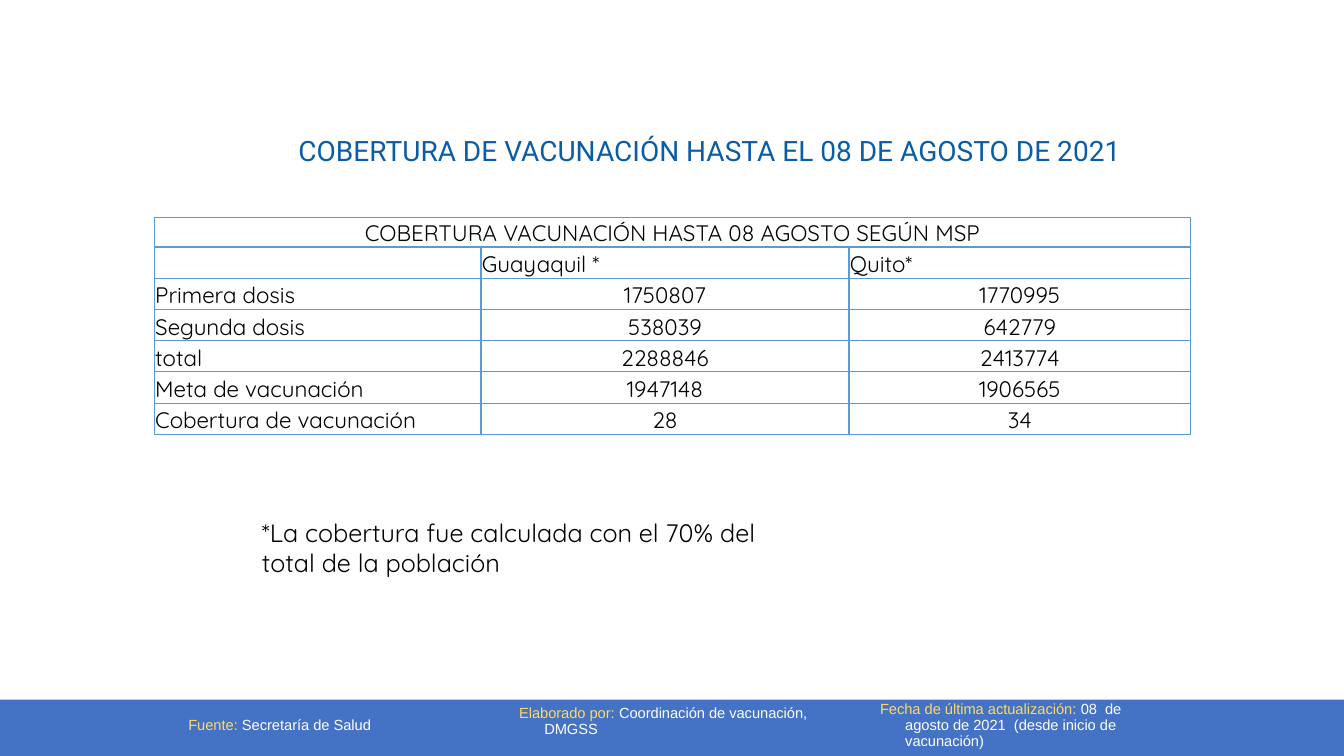
from lxml import etree
from pptx import Presentation
from pptx import util as u
from pptx.dml import color
from pptx.enum import shapes, text
from pptx.oxml import ns

PX = 9144
COLORS = {"band": "4472C4", "title": "095DA6", "label": "FFD966",
          "white": "FFFFFF", "black": "000000", "grid": "5B9BD5"}

FOOTERS = [
    ((177, 700, 324, 40), "Fuente: ", "Secretaría de Salud"),
    ((505, 696, 324, 40), "Elaborado por: ", "Coordinación de vacunación, DMGSS"),
    ((863, 700, 292, 40), "Fecha de última actualización: ",
     "08  de agosto de 2021  (desde inicio de vacunación)"),
]
COVERAGE = [
    ["COBERTURA VACUNACIÓN HASTA 08 AGOSTO SEGÚN MSP", "", ""],
    ["", "Guayaquil *", "Quito*"],
    ["Primera dosis", "1750807", "1770995"],
    ["Segunda dosis", "538039", "642779"],
    ["total", "2288846", "2413774"],
    ["Meta de vacunación", "1947148", "1906565"],
    ["Cobertura de vacunación", "28", "34"],
]


class SlideBuilder:
    """Draws styled elements on one slide, with lengths in px."""

    def __init__(self, presentation):
        self.slide = presentation.slides.add_slide(presentation.slide_layouts[5])

    def box(self, place):
        return [length * PX for length in place]

    def styled_run(self, paragraph, words, font, size, color_name):
        run = paragraph.add_run()
        run.text = words
        run.font.name = font
        run.font.size = u.Pt(size)
        run.font.color.rgb = color.RGBColor.from_string(COLORS[color_name])

    def hang(self, paragraph):
        paragraph.alignment = text.PP_ALIGN.LEFT
        paragraph.line_spacing = 0.9
        paragraph.space_before = u.Pt(10)
        properties = paragraph._p.get_or_add_pPr()
        properties.set("marL", str(25 * PX))
        properties.set("indent", str(-25 * PX))

    def band(self, place):
        shape = self.slide.shapes.add_shape(shapes.MSO_SHAPE.RECTANGLE, *self.box(place))
        shape.shadow.inherit = False
        shape.fill.solid()
        shape.fill.fore_color.rgb = color.RGBColor.from_string(COLORS["band"])
        shape.line.fill.background()

    def title(self, place, words):
        shape = self.slide.shapes.title
        shape.left, shape.top, shape.width, shape.height = self.box(place)
        frame = shape.text_frame
        frame.word_wrap = True
        frame.auto_size = text.MSO_AUTO_SIZE.NONE
        frame.vertical_anchor = text.MSO_ANCHOR.TOP
        self.hang(frame.paragraphs[0])
        self.styled_run(frame.paragraphs[0], words, "Roboto", 20, "title")

    def textbox(self, place):
        frame = self.slide.shapes.add_textbox(*self.box(place)).text_frame
        frame.word_wrap = True
        return frame

    def footer(self, place, label, words):
        frame = self.textbox(place)
        frame.vertical_anchor = text.MSO_ANCHOR.MIDDLE
        paragraph = frame.paragraphs[0]
        self.hang(paragraph)
        self.styled_run(paragraph, label, "Arial", 10.5, "label")
        self.styled_run(paragraph, words, "Arial", 10.5, "white")

    def note(self, place, words):
        frame = self.textbox(place)
        frame.auto_size = text.MSO_AUTO_SIZE.SHAPE_TO_FIT_TEXT
        self.styled_run(frame.paragraphs[0], words, "Quicksand", 18, "black")

    def border(self, cell):
        properties = cell._tc.get_or_add_tcPr()
        for side in ("a:lnL", "a:lnR", "a:lnT", "a:lnB"):
            line = etree.SubElement(properties, ns.qn(side), w=str(u.Pt(1)))
            fill = etree.SubElement(line, ns.qn("a:solidFill"))
            etree.SubElement(fill, ns.qn("a:srgbClr"), val=COLORS["grid"])

    def cell(self, cell, words, centered):
        cell.margin_left = cell.margin_right = cell.margin_top = PX
        cell.margin_bottom = 0
        cell.vertical_anchor = text.MSO_ANCHOR.BOTTOM
        self.border(cell)
        cell.fill.background()
        paragraph = cell.text_frame.paragraphs[0]
        paragraph.alignment = text.PP_ALIGN.CENTER if centered else text.PP_ALIGN.LEFT
        self.styled_run(paragraph, words, "Quicksand", 16, "black")

    def table(self, left, top, widths, heights, rows):
        place = self.box((left, top, sum(widths), sum(heights)))
        table = self.slide.shapes.add_table(len(rows), len(widths), *place).table
        table.first_row = table.horz_banding = False
        for column, width in zip(table.columns, widths):
            column.width = width * PX
        for row, height in zip(table.rows, heights):
            row.height = height * PX
        for i, row in enumerate(rows):
            for j, words in enumerate(row):
                self.cell(table.cell(i, j), words, i == 0 or (i > 1 and j > 0))
        table.cell(0, 0).merge(table.cell(0, len(widths) - 1))


def main():
    presentation = Presentation()
    presentation.slide_width = 1333 * PX
    presentation.slide_height = 750 * PX
    builder = SlideBuilder(presentation)
    builder.band((0, 694, 1333, 56))
    builder.title((286, 131, 869, 86), "COBERTURA DE VACUNACIÓN HASTA EL 08 DE AGOSTO DE 2021")
    for place, label, words in FOOTERS:
        builder.footer(place, label, words)
    builder.note((250, 508, 558, 71),
                 "*La cobertura fue calculada con el 70% del total de la población")
    builder.table(153, 216, [324, 365, 339], [29] + [31] * 6, COVERAGE)
    presentation.save("out.pptx")


if __name__ == "__main__":
    main()
